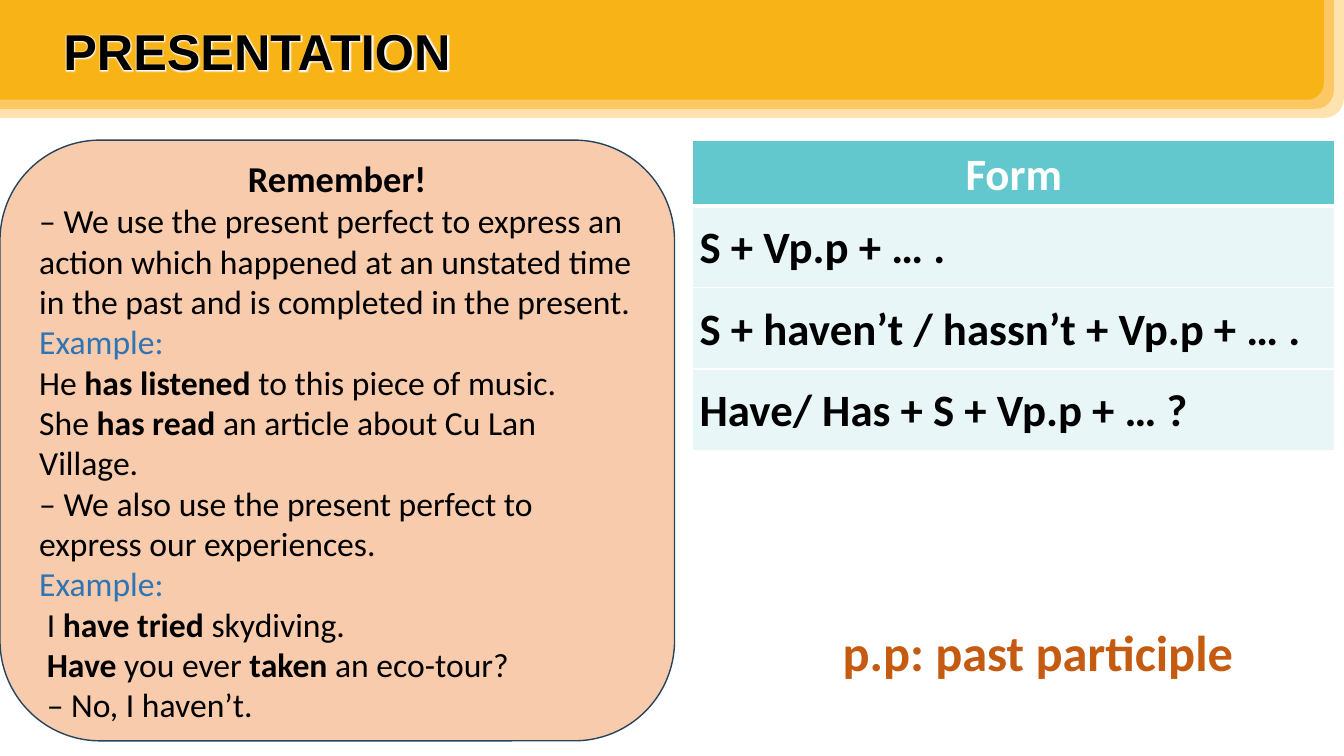
from lxml.etree import SubElement, Element
from pptx import Presentation
from pptx.dml.color import RGBColor
from pptx.enum.shapes import MSO_SHAPE
from pptx.enum.text import MSO_ANCHOR, PP_ALIGN
from pptx.oxml.ns import qn
from pptx.util import Emu, Pt

BLACK = RGBColor(0x00, 0x00, 0x00)
WHITE = RGBColor(0xFF, 0xFF, 0xFF)
BLUE = RGBColor(0x2E, 0x75, 0xB6)
ORANGE = RGBColor(0xC5, 0x5A, 0x11)
PEACH = RGBColor(0xF8, 0xCB, 0xAD)
NAVY = RGBColor(0x28, 0x44, 0x5D)
TEAL = RGBColor(0x62, 0xC8, 0xCE)
PALE_TEAL = RGBColor(0xE8, 0xF6, 0xF8)
BANDS = [RGBColor(0xFE, 0xE3, 0xAF), RGBColor(0xFB, 0xC8, 0x64), RGBColor(0xF8, 0xB4, 0x17)]

RULES = [
    "– We use the present perfect to express an",
    "action which happened at an unstated time in the past and is completed in the present.",
    "Example:",
    "He *has listened* to this piece of music.",
    "She *has read *an article about Cu Lan Village.",
    "– We also use the present perfect to",
    "express our experiences.",
    "Example:",
    " I *have tried *skydiving.",
    " *Have* you ever *taken* an eco-tour?",
    " – No, I haven’t.",
]
FORMS = ["Form", "S + Vp.p + … .", "S + haven’t / hassn’t + Vp.p + … .", "Have/ Has + S + Vp.p + … ?"]


def px(n):
    """Turn px, 100 to the inch, into EMU."""
    return Emu(n * 9144)


def write(p, text, size=24, color=BLACK, bold=False, font="Calibri", align=PP_ALIGN.LEFT, spacing=None):
    """Fill a paragraph; parts between asterisks are bold."""
    p.alignment = align
    if spacing:
        p.line_spacing = spacing
    for i, part in enumerate(text.split("*")):
        if part:
            r = p.add_run()
            r.text = part
            r.font.name, r.font.size = font, Pt(size)
            r.font.bold = bold or i % 2 == 1
            r.font.color.rgb = color


class Deck:
    """Holds the presentation, its style and the current slide."""

    def __init__(self, width, height):
        """Open a blank slide of the given size."""
        self.prs = Presentation()
        self.prs.slide_width, self.prs.slide_height = px(width), px(height)
        self.s = self.prs.slides.add_slide(self.prs.slide_layouts[6])

    def shape(self, kind, box, fill, line=None):
        """Add a filled preset shape."""
        sp = self.s.shapes.add_shape(kind, *map(px, box))
        sp.shadow.inherit = False
        sp.fill.solid()
        sp.fill.fore_color.rgb = fill
        if line:
            sp.line.color.rgb, sp.line.width = line, Pt(1)
        else:
            sp.line.fill.background()
        return sp

    def band(self, box, fill):
        """Add a header band rounded at its bottom right corner."""
        sp = self.shape(MSO_SHAPE.ROUND_1_RECTANGLE, box, fill)
        sp.element.spPr.find(qn("a:xfrm")).set("flipV", "1")

    def text(self, box, text, **style):
        """Add a one-line text box and return its paragraph."""
        tf = self.s.shapes.add_textbox(*map(px, box)).text_frame
        tf.word_wrap = True
        write(tf.paragraphs[0], text, **style)
        return tf.paragraphs[0]

    def glow(self, p, color, radius):
        """Put a glow round the text of a paragraph."""
        rPr = p.runs[0].font._element
        effects = Element(qn("a:effectLst"))
        glow = SubElement(effects, qn("a:glow"), rad=str(Pt(radius)))
        SubElement(glow, qn("a:srgbClr"), val=str(color))
        rPr.find(qn("a:solidFill")).addnext(effects)

    def panel(self, box, title, lines):
        """Add the rounded panel of grammar rules."""
        tf = self.shape(MSO_SHAPE.ROUNDED_RECTANGLE, box, PEACH, NAVY).text_frame
        tf.word_wrap, tf.vertical_anchor = True, MSO_ANCHOR.MIDDLE
        write(tf.paragraphs[0], title, size=26, bold=True, align=PP_ALIGN.CENTER)
        for line in lines:
            write(tf.add_paragraph(), line, color=BLUE if line == "Example:" else BLACK)

    def borders(self, cell, **widths):
        """Draw white cell borders of the given widths."""
        tcPr = cell._tc.get_or_add_tcPr()
        for i, side in enumerate("LRTB"):
            ln = Element(qn(f"a:ln{side}"), w=str(Pt(widths.get(side, 1))))
            SubElement(SubElement(ln, qn("a:solidFill")), qn("a:srgbClr"), val=str(WHITE))
            tcPr.insert(i, ln)

    def table(self, box, rows, heights):
        """Add a one-column table with a header row."""
        table = self.s.shapes.add_table(len(rows), 1, *map(px, box)).table
        for i, (text, height) in enumerate(zip(rows, heights)):
            head = i == 0
            table.rows[i].height = px(height)
            cell = table.cell(i, 0)
            cell.margin_left = cell.margin_right = px(7)
            cell.margin_top = cell.margin_bottom = px(4)
            cell.vertical_anchor = MSO_ANCHOR.TOP if head else MSO_ANCHOR.MIDDLE
            cell.fill.solid()
            cell.fill.fore_color.rgb = TEAL if head else PALE_TEAL
            self.borders(cell, T=3 if i == 1 else 1, B=3 if head else 1)
            write(cell.text_frame.paragraphs[0], text, size=32, bold=True, spacing=1.07,
                  color=WHITE if head else BLACK,
                  align=PP_ALIGN.CENTER if head else PP_ALIGN.JUSTIFY)


def main():
    """Build the slide and save it."""
    deck = Deck(1333, 750)
    for i, fill in enumerate(BANDS):
        deck.band((0, -1, 1333 - 10 * i, 118 - 9 * i), fill)
    title = deck.text((53, 15, 452, 71), "PRESENTATION", size=36, bold=True, font="Arial")
    deck.glow(title, WHITE, 3)
    deck.table((687, 139, 637, 307), FORMS, [64, 81, 81, 81])
    deck.text((794, 611, 471, 71), "p.p: past participle", size=36, bold=True,
              color=ORANGE, align=PP_ALIGN.CENTER)
    deck.panel((0, 139, 669, 596), "Remember!", RULES)
    deck.prs.save("out.pptx")


if __name__ == "__main__":
    main()
